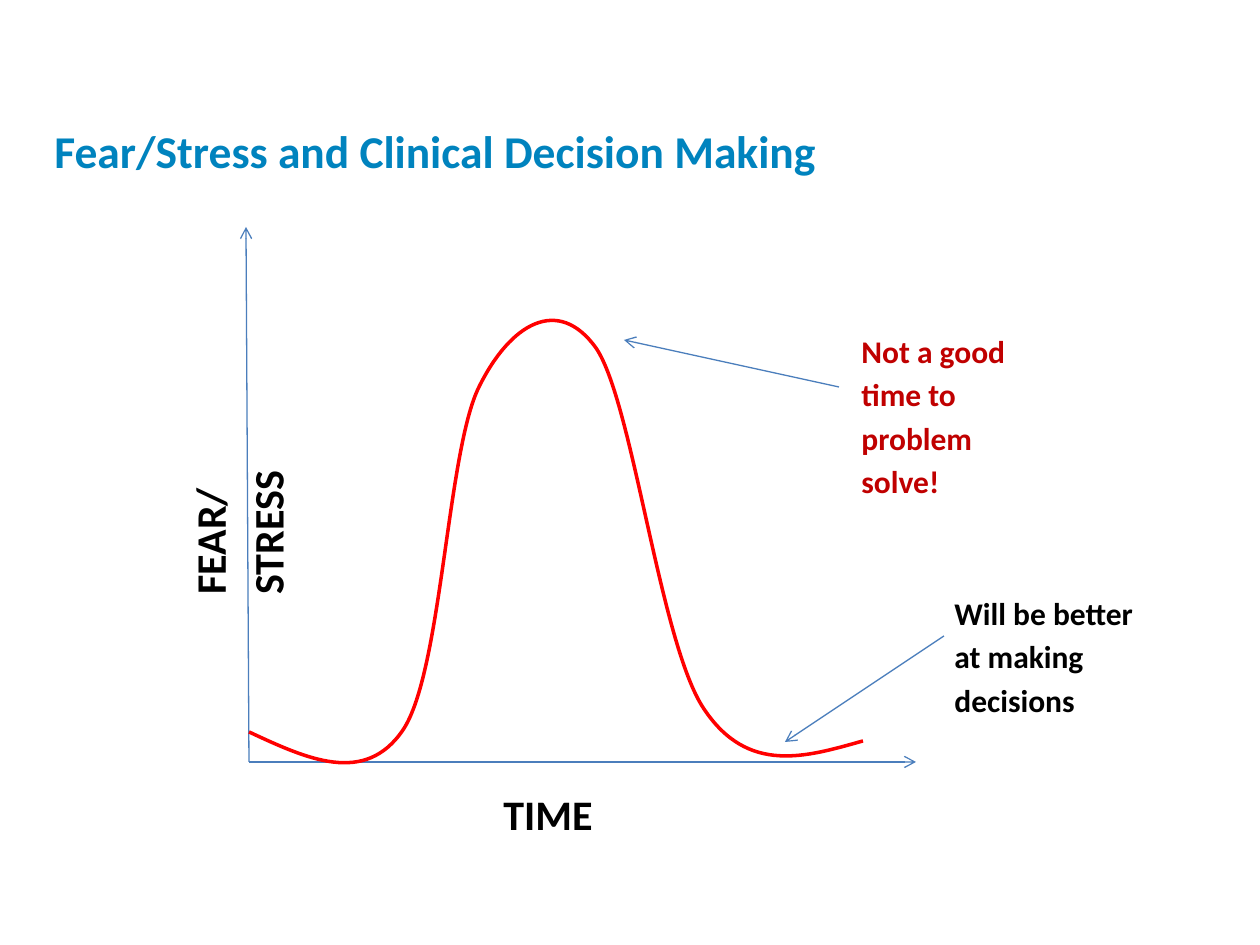
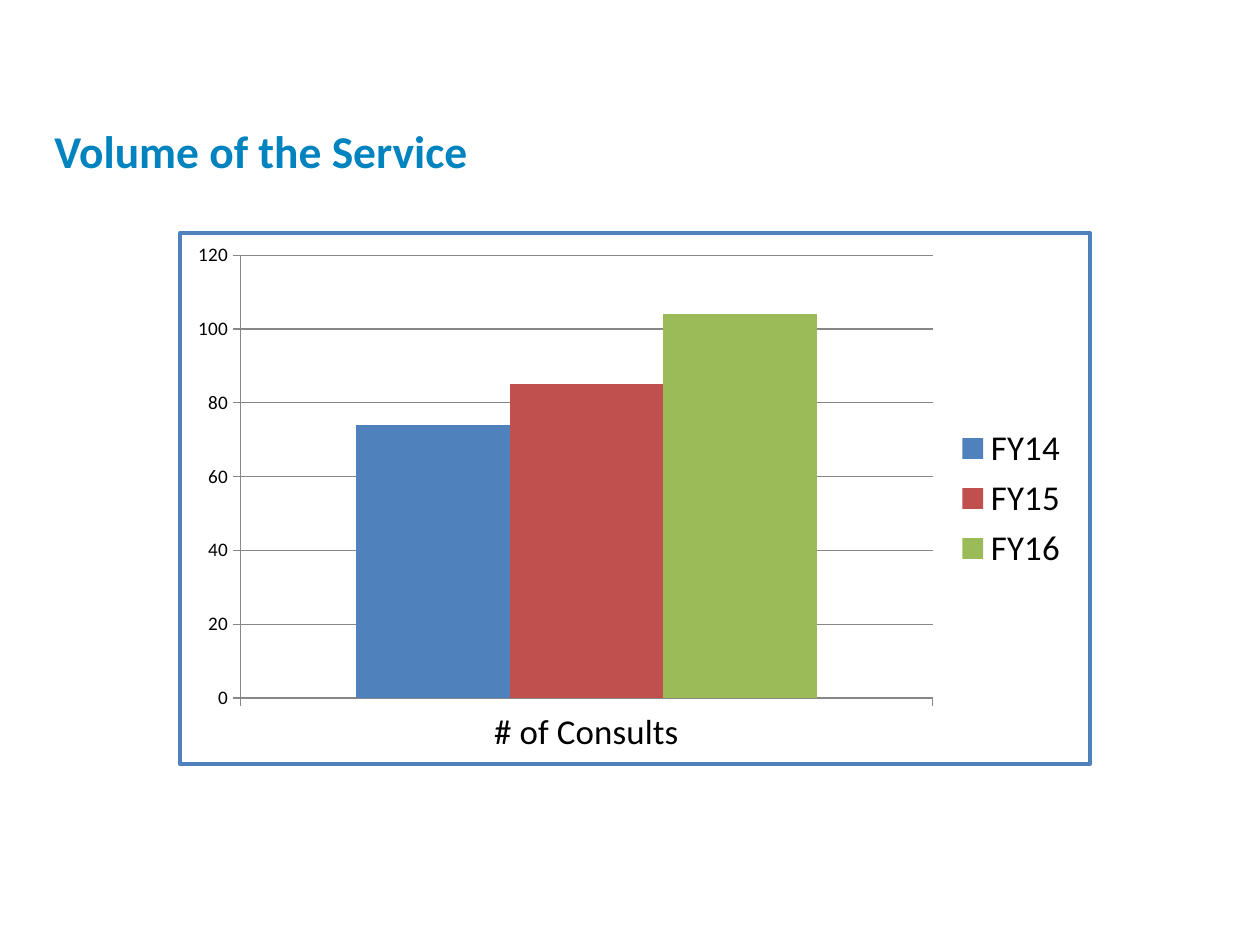
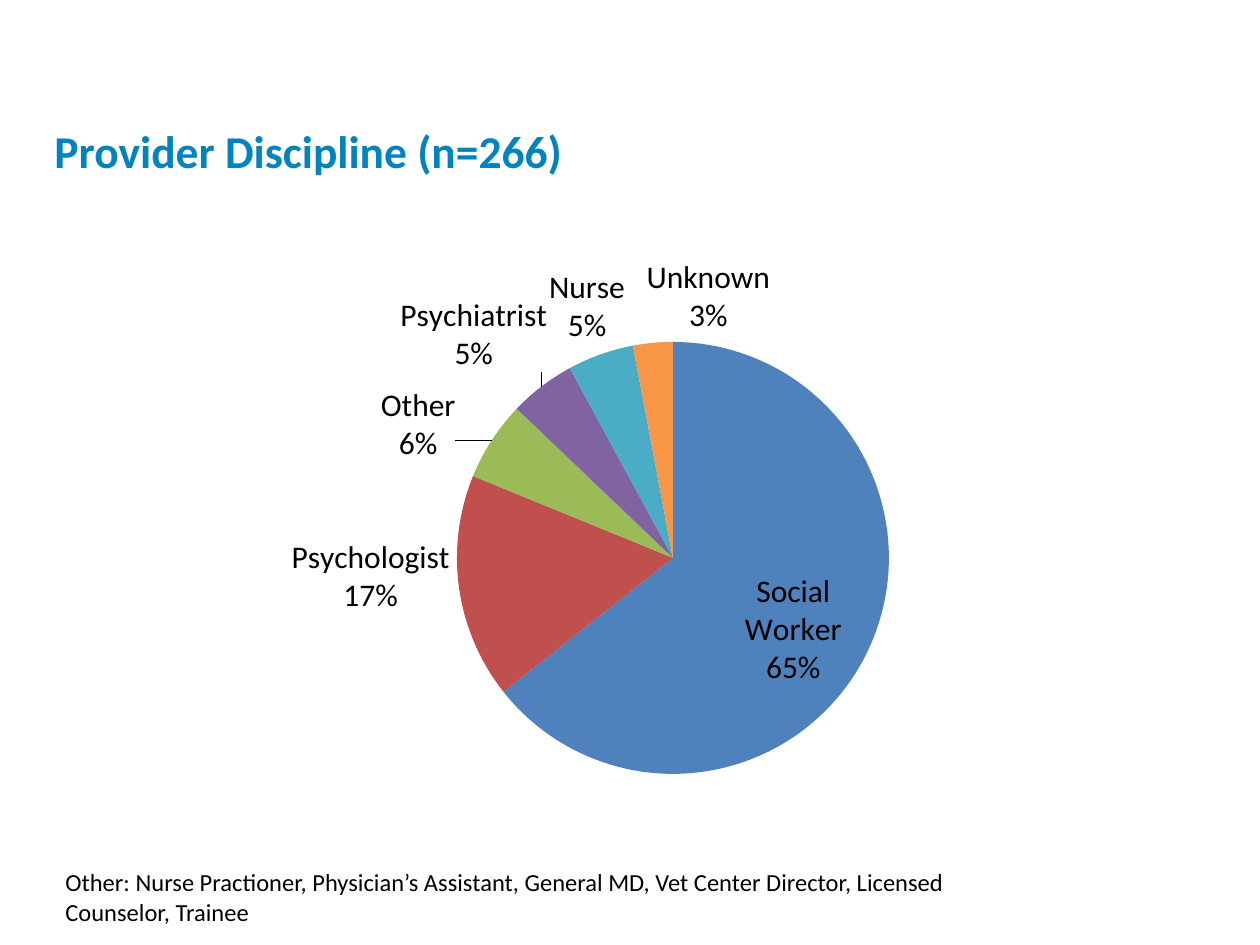
from copy import deepcopy

from pptx import Presentation
from pptx import util as u
from pptx.chart.data import CategoryChartData
from pptx.dml.color import RGBColor
from pptx.enum import chart as ch, shapes, text
from pptx.oxml import parse_xml
from pptx.oxml.ns import nsdecls, qn
from pptx.oxml.xmlchemy import OxmlElement

PX = u.Inches(1) / 126
FONT = "Calibri"
BLACK, TITLE_BLUE, LINE_BLUE = "000000", "0083BE", "4B7EBC"
DARK_RED, RED, GREY = "C00000", "FF0000", "878787"
PALETTE = ["4F81BD", "C0504D", "9BBB59", "8064A2", "4BACC6", "F79646"]

STRESS_BOX = (249, 320, 614, 442)
STRESS_START = (249, 732)
# Each segment: two control points, then the end point
STRESS_SEGMENTS = [
    ((307, 759), (365, 786), (403, 730)),
    ((442, 672), (447, 451), (479, 387)),
    ((510, 324), (558, 295), (596, 348)),
    ((633, 402), (660, 644), (704, 709)),
    ((748, 775), (806, 757), (863, 741)),
]

# Discipline, share in percent, shift of its label in px
DISCIPLINES = [
    ("Social Worker", 65, (-19, 38)),
    ("Psychologist", 17, (-2, -51)),
    ("Other", 6, (-30, 26)),
    ("Psychiatrist", 5, (10, -8)),
    ("Nurse", 5, (27, -3)),
    ("Unknown", 3, (118, -1)),
]


def px(n):
    return u.Emu(round(n * PX))


def rgb(hex_string):
    return RGBColor.from_string(hex_string)


def style_font(font, size, color=BLACK, bold=False):
    font.name, font.size, font.bold = FONT, u.Pt(size), bold
    font.color.rgb = rgb(color)


def add_text(s, box, words, size, color=BLACK, bold=True, spacing=1.15, after=10):
    sp = s.shapes.add_textbox(*map(px, box))
    tf = sp.text_frame
    tf.word_wrap = True
    p = tf.paragraphs[0]
    p.text = words
    p.line_spacing, p.space_after = spacing, u.Pt(after)
    style_font(p.font, size, color, bold)
    return tf


def add_titled_slide(prs, title):
    s = prs.slides.add_slide(prs.slide_layouts[6])
    tf = add_text(s, (42, 120, 1169, 71), title, 26, TITLE_BLUE, spacing=0.8, after=0)
    tf.vertical_anchor = text.MSO_ANCHOR.MIDDLE
    return s


def add_arrow(s, start, end):
    sp = s.shapes.add_connector(shapes.MSO_CONNECTOR.STRAIGHT, *map(px, start + end))
    sp.line.color.rgb, sp.line.width = rgb(LINE_BLUE), u.Pt(0.75)
    sp.line._get_or_add_ln().append(
        parse_xml(f'<a:tailEnd {nsdecls("a")} type="arrow"/>'))
    sp._element.spPr.append(OxmlElement("a:effectLst"))


def add_curve(s, box, start, segments, color):
    """Open outline of cubic curves; box is what the curve itself covers."""
    left, top, width, height = box
    builder = s.shapes.build_freeform(left, top, scale=PX)
    builder.add_line_segments([(left + width, top + height)], close=False)
    sp = builder.convert_to_shape()
    outline = next(sp._element.iter(qn("a:path")))
    for child in list(outline):
        outline.remove(child)
    for tag, points in [("moveTo", [start])] + [("cubicBezTo", seg) for seg in segments]:
        pts = "".join(f'<a:pt x="{x - left}" y="{y - top}"/>' for x, y in points)
        outline.append(parse_xml(f'<a:{tag} {nsdecls("a")}>{pts}</a:{tag}>'))
    sp.shadow.inherit = False
    sp.fill.background()
    sp.line.color.rgb, sp.line.width = rgb(color), u.Pt(2)


def add_chart(s, kind, box, categories, series, size):
    data = CategoryChartData()
    data.categories = categories
    for name, values in series:
        data.add_series(name, values)
    chart = s.shapes.add_chart(kind, *map(px, box), data).chart
    style_font(chart.font, size)
    chart.has_title = chart.has_legend = False
    return chart


def add_chart_border(chart, color, width):
    border = parse_xml(
        f'<c:spPr {nsdecls("c", "a")}><a:ln w="{u.Pt(width)}"><a:solidFill>'
        f'<a:srgbClr val="{color}"/></a:solidFill></a:ln></c:spPr>')
    chart._chartSpace.find(qn("c:chart")).addnext(border)


def manual_layout(settings):
    children = "".join(f'<c:{k} val="{v}"/>' for k, v in settings.items())
    return parse_xml(f'<c:layout {nsdecls("c")}><c:manualLayout>{children}'
                     '</c:manualLayout></c:layout>')


def place_plot(chart, chart_box, plot_box):
    left, top, width, height = chart_box
    x, y, w, h = plot_box
    area = chart._chartSpace.find(qn("c:chart")).find(qn("c:plotArea"))
    old = area.find(qn("c:layout"))
    if old is not None:
        area.remove(old)
    area.insert(0, manual_layout({
        "layoutTarget": "inner", "xMode": "edge", "yMode": "edge",
        "x": (x - left) / width, "y": (y - top) / height,
        "w": w / width, "h": h / height}))


def label_slices(series, size, chart_box, shifts):
    """Name and share outside each slice; the first slice is labelled inside."""
    labels = series.data_labels
    style_font(labels.font, size)
    labels.number_format, labels.number_format_is_linked = '0"%"', False
    labels.show_value = labels.show_category_name = True
    labels.position = ch.XL_LABEL_POSITION.OUTSIDE_END
    group = labels._element
    separator = OxmlElement("c:separator")
    separator.text = "\n"
    group.find(qn("c:showBubbleSize")).addnext(separator)

    shared = [c for c in group if c.tag != qn("c:showLeaderLines")]
    for i, (dx, dy) in enumerate(shifts):
        label = parse_xml(f'<c:dLbl {nsdecls("c")}><c:idx val="{i}"/></c:dLbl>')
        label.append(manual_layout({"x": dx / chart_box[2], "y": dy / chart_box[3]}))
        label.extend(deepcopy(shared))
        if i == 0:
            label.find(qn("c:dLblPos")).set("val", "inEnd")
        group.insert(i, label)


def build_stress_slide(prs):
    s = add_titled_slide(prs, "Fear/Stress and Clinical Decision Making")
    origin = (249, 762)
    add_arrow(s, origin, (246, 227))
    add_arrow(s, origin, (916, 762))
    tf = add_text(s, (170, 363, 81, 244), "FEAR/STRESS", 24)
    tf._txBody.bodyPr.set("vert", "vert270")
    tf.auto_size = text.MSO_AUTO_SIZE.SHAPE_TO_FIT_TEXT
    add_text(s, (491, 775, 188, 40), "TIME", 24)
    add_text(s, (849, 320, 209, 66), "Not a good time to problem solve!", 18, DARK_RED)
    add_text(s, (942, 582, 209, 66), "Will be better at making decisions", 18)
    add_arrow(s, (839, 387), (624, 340))
    add_arrow(s, (944, 636), (785, 742))
    add_curve(s, STRESS_BOX, STRESS_START, STRESS_SEGMENTS, RED)


def build_volume_slide(prs):
    s = add_titled_slide(prs, "Volume of the Service")
    chart = add_chart(s, ch.XL_CHART_TYPE.COLUMN_CLUSTERED, (178, 231, 914, 535),
                      ["# of Consults"],
                      [("FY14", [74]), ("FY15", [85]), ("FY16 ", [104])], 14)
    add_chart_border(chart, PALETTE[0], 2.25)
    plot = chart.plots[0]
    plot.gap_width, plot.vary_by_categories = 150, False
    for series, color in zip(plot.series, PALETTE):
        series.format.fill.solid()
        series.format.fill.fore_color.rgb = rgb(color)

    for axis, size in ((chart.category_axis, 20), (chart.value_axis, 11)):
        style_font(axis.tick_labels.font, size)
        axis.major_tick_mark = ch.XL_TICK_MARK.OUTSIDE
        axis.format.line.color.rgb = rgb(GREY)
    axis = chart.value_axis
    axis.minimum_scale, axis.maximum_scale, axis.major_unit = 0, 120, 20
    axis.has_major_gridlines = True
    axis.major_gridlines.format.line.color.rgb = rgb(GREY)

    chart.has_legend = True
    chart.legend.position = ch.XL_LEGEND_POSITION.RIGHT
    chart.legend.include_in_layout = False
    style_font(chart.legend.font, 20)


def build_discipline_slide(prs):
    s = add_titled_slide(prs, "Provider Discipline (n=266)")
    names, shares, shifts = zip(*DISCIPLINES)
    box = (94, 242, 1081, 598)
    chart = add_chart(s, ch.XL_CHART_TYPE.PIE, box, names, [("Series 1", shares)], 18)
    place_plot(chart, box, (457, 342, 432, 432))
    series = chart.plots[0].series[0]
    for i, color in enumerate(PALETTE):
        fill = series.points[i].format.fill
        fill.solid()
        fill.fore_color.rgb = rgb(color)
    label_slices(series, 18, box, shifts)
    add_text(s, (53, 861, 966, 72),
             "Other: Nurse Practioner, Physician’s Assistant, General MD, "
             "Vet Center Director, Licensed Counselor, Trainee",
             14, bold=False, spacing=1.0, after=0)


def main():
    prs = Presentation()
    prs.slide_width, prs.slide_height = px(1260), px(945)
    build_stress_slide(prs)
    build_volume_slide(prs)
    build_discipline_slide(prs)
    prs.save("out.pptx")


if __name__ == "__main__":
    main()
